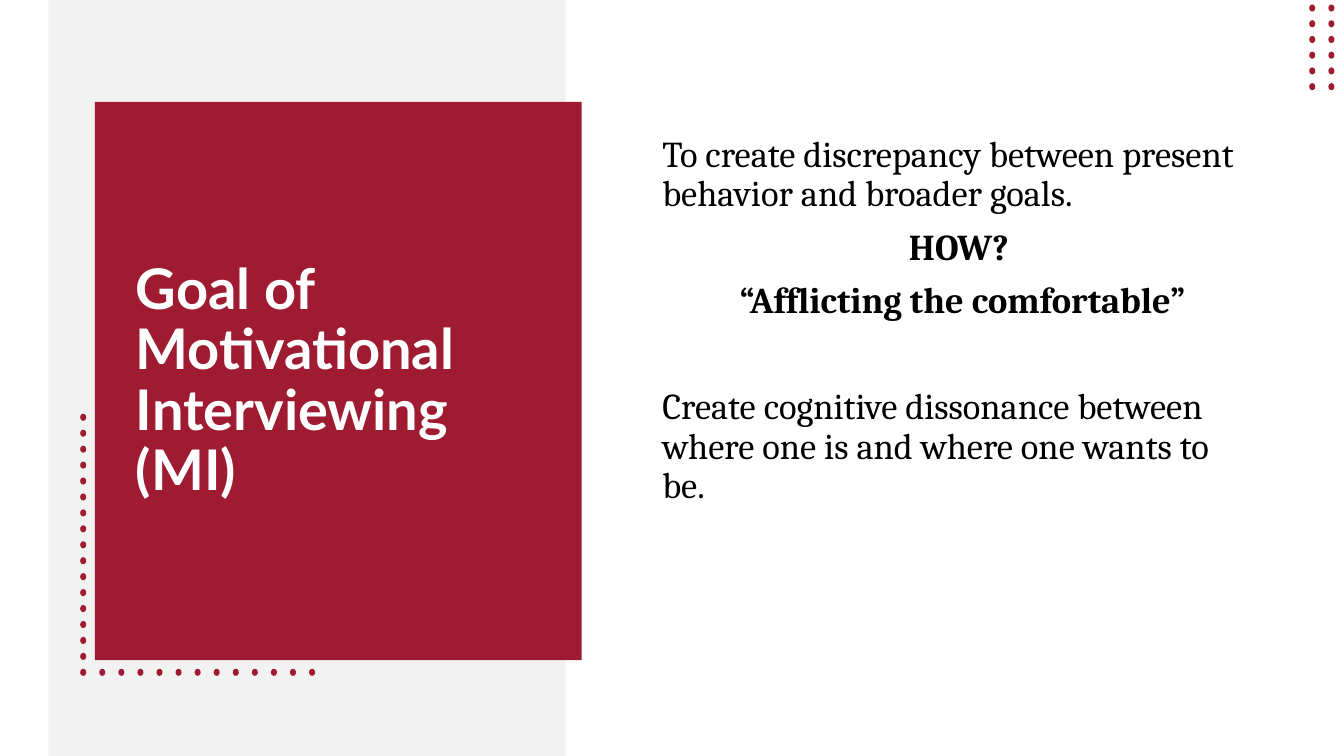
from dataclasses import dataclass

from pptx import Presentation
from pptx.dml.color import RGBColor
from pptx.enum.shapes import MSO_SHAPE
from pptx.enum.text import MSO_ANCHOR, PP_ALIGN
from pptx.util import Emu, Pt

RECT, OVAL = MSO_SHAPE.RECTANGLE, MSO_SHAPE.OVAL
TOP, MIDDLE = MSO_ANCHOR.TOP, MSO_ANCHOR.MIDDLE
LEFT, CENTER = PP_ALIGN.LEFT, PP_ALIGN.CENTER

PX = 9144  # EMU in one px, 100 px to the inch
SLIDE_W, SLIDE_H = 1333, 750
DOT_W, DOT_H = 7, 6


@dataclass(frozen=True)
class Theme:
    crimson: str = "9E1B32"
    gray: str = "F2F2F2"
    white: str = "FFFFFF"
    black: str = "000000"
    title_font: str = "Lato"
    body_font: str = "Cambria"
    title_size: int = 40
    body_size: int = 26
    line_spacing: float = 0.9


THEME = Theme()


def px(n):
    return Emu(round(n * PX))


def add_shape(shapes, kind, box, color):
    sp = shapes.add_shape(kind, *map(px, box))
    sp.shadow.inherit = False
    sp.fill.solid()
    sp.fill.fore_color.rgb = RGBColor.from_string(color)
    sp.line.fill.background()
    return sp


def add_text_frame(s, box, anchor, inset_top=5):
    tf = s.shapes.add_textbox(*map(px, box)).text_frame
    tf.word_wrap = True
    tf.vertical_anchor = anchor
    tf.margin_top = px(inset_top)
    return tf


def write(p, text, *, font, size, color, bold=False, align=LEFT, before=0):
    p.alignment = align
    p.line_spacing = THEME.line_spacing
    p.space_before = Pt(before)
    r = p.add_run()
    r.text = text
    r.font.name = font
    r.font.size = Pt(size)
    r.font.bold = bold
    r.font.color.rgb = RGBColor.from_string(color)


def grid(box, cols, rows):
    """Top left corners of dots spread evenly over the box."""
    x, y, w, h = box
    step_x = (w - DOT_W) / max(cols - 1, 1)
    step_y = (h - DOT_H) / max(rows - 1, 1)
    return [(x + c * step_x, y + r * step_y)
            for r in range(rows) for c in range(cols)]


def dots(s, corners):
    group = s.shapes.add_group_shape()
    for x, y in corners:
        add_shape(group.shapes, OVAL, (x, y, DOT_W, DOT_H),
                  THEME.crimson).rotation = 90


def dotted_corner(s, box):
    x, y, w, h = box
    column = grid((x, y, DOT_W, h), 1, 17)
    row = grid((x, y + h - DOT_H, w, DOT_H), 13, 1)
    dots(s, column + row[1:])  # the corner dot is already in the column


def title_panel(s, box):
    x, y, w, h = box
    add_shape(s.shapes, RECT, box, THEME.crimson)
    dotted_corner(s, (x - 15, y + 310, 234, 259))
    tf = add_text_frame(s, (x + 31, y + 44, w - 69, h - 86), MIDDLE)
    write(tf.paragraphs[0], "Goal of Motivational Interviewing (MI)",
          font=THEME.title_font, size=THEME.title_size,
          color=THEME.white, bold=True)


def body(s, box):
    paragraphs = [
        ("To create discrepancy between present behavior and broader goals.",
         {}),
        ("HOW?", dict(bold=True, align=CENTER, before=10)),
        (" “Afflicting the comfortable”",
         dict(bold=True, align=CENTER, before=10)),
        ("Create cognitive dissonance between where one is and where one "
         "wants to be.", dict(before=48)),
    ]
    tf = add_text_frame(s, box, TOP, inset_top=34)
    for i, (text, style) in enumerate(paragraphs):
        p = tf.add_paragraph() if i else tf.paragraphs[0]
        write(p, text, font=THEME.body_font, size=THEME.body_size,
              color=THEME.black, **style)


def main():
    prs = Presentation()
    prs.slide_width, prs.slide_height = px(SLIDE_W), px(SLIDE_H)
    s = prs.slides.add_slide(prs.slide_layouts[6])

    # Gray band behind the title
    add_shape(s.shapes, RECT, (48, 0, 513, SLIDE_H), THEME.gray)
    # Title panel with its dotted corner
    title_panel(s, (94, 101, 483, 554))
    # Dots in the top right corner
    dots(s, grid((1298, 5, 26, 84), 2, 6))
    # Body text
    body(s, (647, 101, 608, 554))

    prs.save("out.pptx")


if __name__ == "__main__":
    main()
